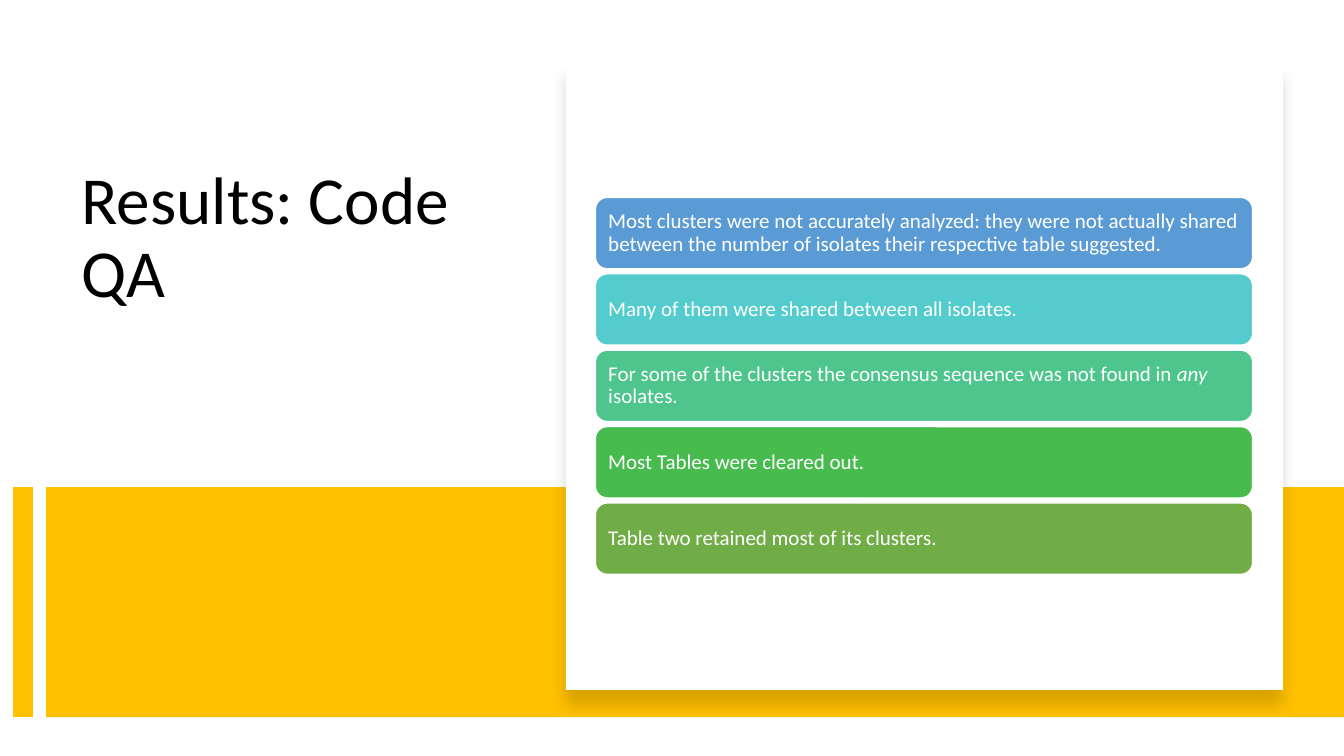
from lxml.etree import SubElement
from pptx import Presentation
from pptx.dml.color import RGBColor
from pptx.enum.shapes import MSO_CONNECTOR, MSO_SHAPE
from pptx.enum.text import MSO_ANCHOR, PP_ALIGN
from pptx.oxml.ns import qn
from pptx.util import Pt

TITLE = "Results: Code QA"
FINDINGS = [
    ("blue", [("Most clusters were not accurately analyzed: they were not actually shared "
               "between the number of isolates their respective table suggested.", False)]),
    ("teal", [("Many of them were shared between all isolates.", False)]),
    ("mint", [("For some of the clusters the consensus sequence was not found in ", False),
              ("any", True), (" isolates.", False)]),
    ("green", [("Most Tables were cleared out.", False)]),
    ("olive", [("Table two retained most of its clusters.", False)]),
]
COLORS = {"black": "000000", "white": "FFFFFF", "gold": "FFC000", "blue": "5B9BD5",
          "teal": "54CCCD", "mint": "4DC58D", "green": "48BB4F", "olive": "70AD47"}
FONT = "Calibri"
PX = 9525
SLIDE_W, SLIDE_H = 1280, 720
TITLE_BOX = (68, 154, 398, 282)
BAND = (44, 464, 1236, 219)
STRIPE_X = 22
CARD = (539, 61, 683, 596)
BAR_X, BAR_W, BAR_H = 567, 626, 68
FIRST_TOP, LAST_TOP = 188, 479
BAR_INSET = 9


def px(*values):
    return [round(v * PX) for v in values]


def rgb(name):
    return RGBColor.from_string(COLORS[name])


def set_font(p, size, color):
    p.font.name = FONT
    p.font.size = Pt(size)
    p.font.color.rgb = rgb(color)


def add_block(s, kind, box, fill, line=None):
    sp = s.shapes.add_shape(kind, *px(*box))
    sp.shadow.inherit = False
    sp.fill.solid()
    sp.fill.fore_color.rgb = rgb(fill)
    if line:
        sp.line.color.rgb = rgb(line)
        sp.line.width = Pt(1)
    else:
        sp.line.fill.background()
    return sp


def add_stripe(s):
    top, height = BAND[1], BAND[3]
    line = s.shapes.add_connector(MSO_CONNECTOR.STRAIGHT,
                                  *px(STRIPE_X, top, STRIPE_X, top + height))
    line.line.color.rgb = rgb("gold")
    line.line.width = Pt(14)
    SubElement(line._element.spPr, qn("a:effectLst"))


def add_shadow(sp):
    effects = sp._element.spPr.find(qn("a:effectLst"))
    shadow = SubElement(effects, qn("a:outerShdw"), blurRad=str(Pt(11)), dist=str(Pt(10)),
                        dir="5400000", algn="t", rotWithShape="0")
    color = SubElement(shadow, qn("a:srgbClr"), val=COLORS["black"])
    SubElement(color, qn("a:alpha"), val="15000")


def add_finding(s, top, color, runs):
    sp = add_block(s, MSO_SHAPE.ROUNDED_RECTANGLE, (BAR_X, top, BAR_W, BAR_H), color, "white")
    tf = sp.text_frame
    tf.word_wrap = True
    tf.vertical_anchor = MSO_ANCHOR.MIDDLE
    tf.margin_left = tf.margin_right = tf.margin_top = tf.margin_bottom = BAR_INSET * PX
    p = tf.paragraphs[0]
    p.alignment = PP_ALIGN.LEFT
    p.line_spacing = 0.9
    set_font(p, 15, "white")
    for text, italic in runs:
        r = p.add_run()
        r.text = text
        if italic:
            r.font.italic = True


def main():
    prs = Presentation()
    prs.slide_width, prs.slide_height = px(SLIDE_W, SLIDE_H)
    s = prs.slides.add_slide(prs.slide_layouts[5])

    title = s.shapes.title
    title.left, title.top, title.width, title.height = px(*TITLE_BOX)
    tf = title.text_frame
    tf.text = TITLE
    tf.word_wrap = True
    tf.vertical_anchor = MSO_ANCHOR.TOP
    p = tf.paragraphs[0]
    p.alignment = PP_ALIGN.LEFT
    p.line_spacing = 0.9
    set_font(p, 48, "black")

    add_block(s, MSO_SHAPE.RECTANGLE, BAND, "gold")
    add_stripe(s)
    add_shadow(add_block(s, MSO_SHAPE.RECTANGLE, CARD, "white"))

    pitch = (LAST_TOP - FIRST_TOP) / (len(FINDINGS) - 1)
    for i, (color, runs) in enumerate(FINDINGS):
        add_finding(s, FIRST_TOP + i * pitch, color, runs)

    prs.save("out.pptx")


if __name__ == "__main__":
    main()
